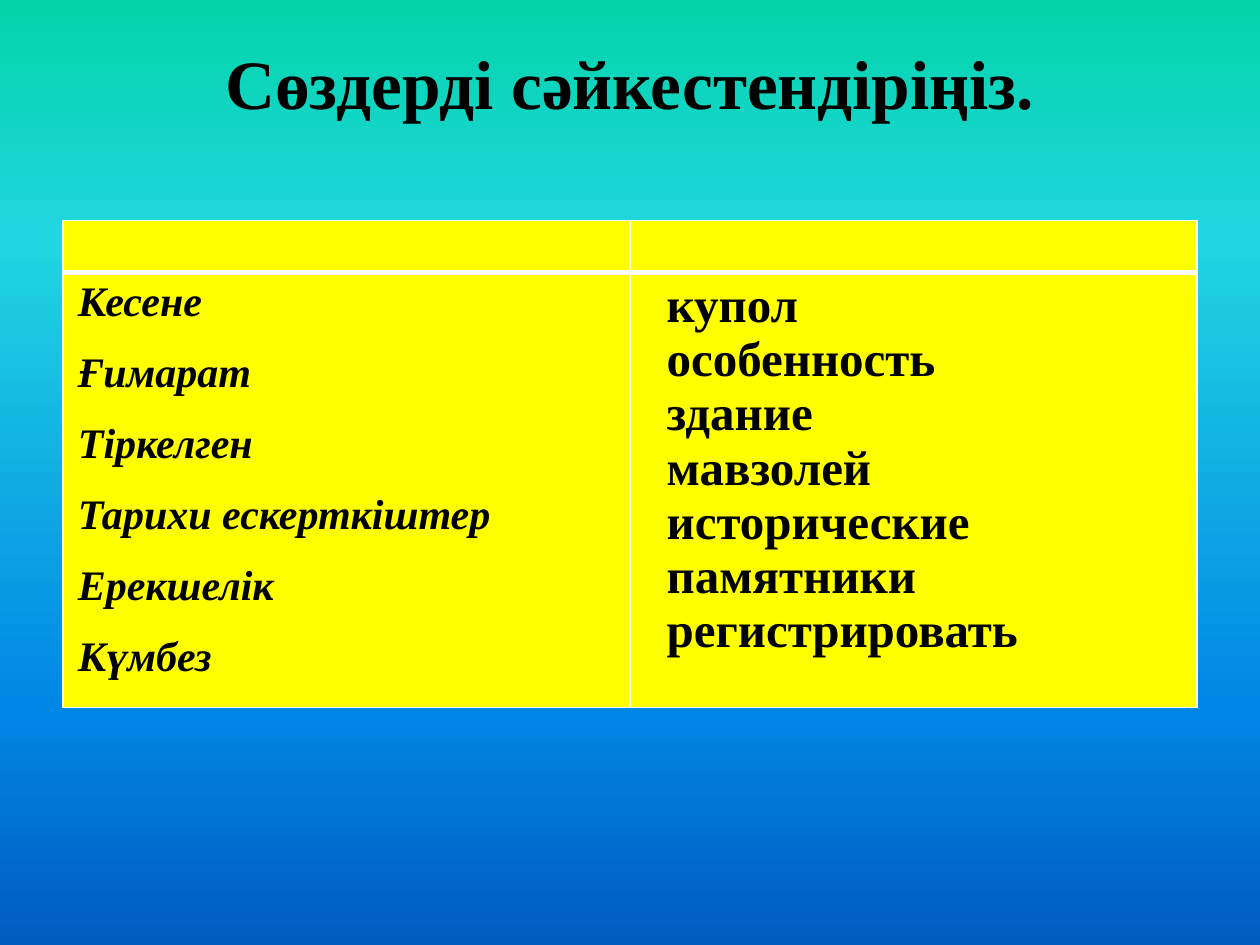
from dataclasses import dataclass

from lxml import etree
from pptx import Presentation
from pptx import util as u
from pptx.dml.color import RGBColor
from pptx.enum import text
from pptx.oxml import ns


@dataclass(frozen=True)
class Theme:
    font: str = "Times New Roman"
    ink: str = "000000"
    cell: str = "FFFF00"
    border: str = "FFFFFF"
    title_size: float = 39.6
    kazakh_size: float = 24
    russian_size: float = 28
    thin: float = 1
    thick: float = 3
    gradient: tuple = ((0, "03D4A8"), (25, "21D6E0"), (75, "0087E6"), (100, "005CBF"))


THEME = Theme()
KAZAKH = ["Кесене", "Ғимарат", "Тіркелген", "Тарихи ескерткіштер", "Ерекшелік", "Күмбез"]
RUSSIAN = ["купол", "особенность", "здание", "мавзолей", "исторические", "памятники", "регистрировать"]


def add_colour(parent, colour):
    etree.SubElement(parent, ns.qn("a:srgbClr"), val=colour)


def set_background(s):
    fill = s.background.fill
    fill.gradient()
    fill.gradient_angle = 270
    stops = s.background._cSld.find(".//" + ns.qn("a:gsLst"))
    for stop in list(stops):
        stops.remove(stop)
    for percent, colour in THEME.gradient:
        add_colour(etree.SubElement(stops, ns.qn("a:gs"), pos=str(percent * 1000)), colour)


def write(tf, lines, size, italic=False, align=text.PP_ALIGN.LEFT, spacing=None, after=0):
    tf.word_wrap = True
    for i, line in enumerate(lines):
        p = tf.add_paragraph() if i else tf.paragraphs[0]
        p.alignment = align
        p.line_spacing = spacing
        p.space_after = u.Pt(after)
        r = p.add_run()
        r.text = line
        r.font.name = THEME.font
        r.font.size = u.Pt(size)
        r.font.bold = True
        r.font.italic = italic
        r.font.color.rgb = RGBColor.from_string(THEME.ink)


def style_cell(cell, top, bottom):
    cell.fill.solid()
    cell.fill.fore_color.rgb = RGBColor.from_string(THEME.cell)
    tc_pr = cell._tc.get_or_add_tcPr()
    sides = {"lnL": THEME.thin, "lnR": THEME.thin, "lnT": top, "lnB": bottom}
    for i, (side, width) in enumerate(sides.items()):
        ln = etree.Element(ns.qn("a:" + side), w=str(u.Pt(width)))
        add_colour(etree.SubElement(ln, ns.qn("a:solidFill")), THEME.border)
        tc_pr.insert(i, ln)


def add_title(s, title):
    tf = s.shapes.add_textbox(u.Cm(1.27), u.Cm(0.76), u.Cm(22.86), u.Cm(3.18)).text_frame
    tf.margin_top = u.Cm(0.05)
    write(tf, [title], THEME.title_size, align=text.PP_ALIGN.CENTER)


def add_word_table(s):
    heights = [u.Cm(1.04), u.Cm(8.69)]
    table = s.shapes.add_table(2, 2, u.Cm(1.27), u.Cm(4.45), u.Cm(22.86), sum(heights)).table
    for row, height in zip(table.rows, heights):
        row.height = height
    for column in range(2):
        style_cell(table.cell(0, column), THEME.thin, THEME.thick)
        style_cell(table.cell(1, column), THEME.thick, THEME.thin)

    kazakh, russian = table.cell(1, 0), table.cell(1, 1)
    kazakh.margin_left = kazakh.margin_right = u.Cm(0.3)
    kazakh.margin_top = kazakh.margin_bottom = 0
    russian.margin_left = u.Cm(0.74)
    write(kazakh.text_frame, KAZAKH, THEME.kazakh_size, italic=True, spacing=1.15, after=10)
    write(russian.text_frame, RUSSIAN, THEME.russian_size)


def main():
    prs = Presentation()
    prs.slide_width, prs.slide_height = u.Cm(25.4), u.Cm(19.05)
    s = prs.slides.add_slide(prs.slide_layouts[6])
    set_background(s)
    add_title(s, "Сөздерді сәйкестендіріңіз.")
    add_word_table(s)
    prs.save("out.pptx")


if __name__ == "__main__":
    main()
